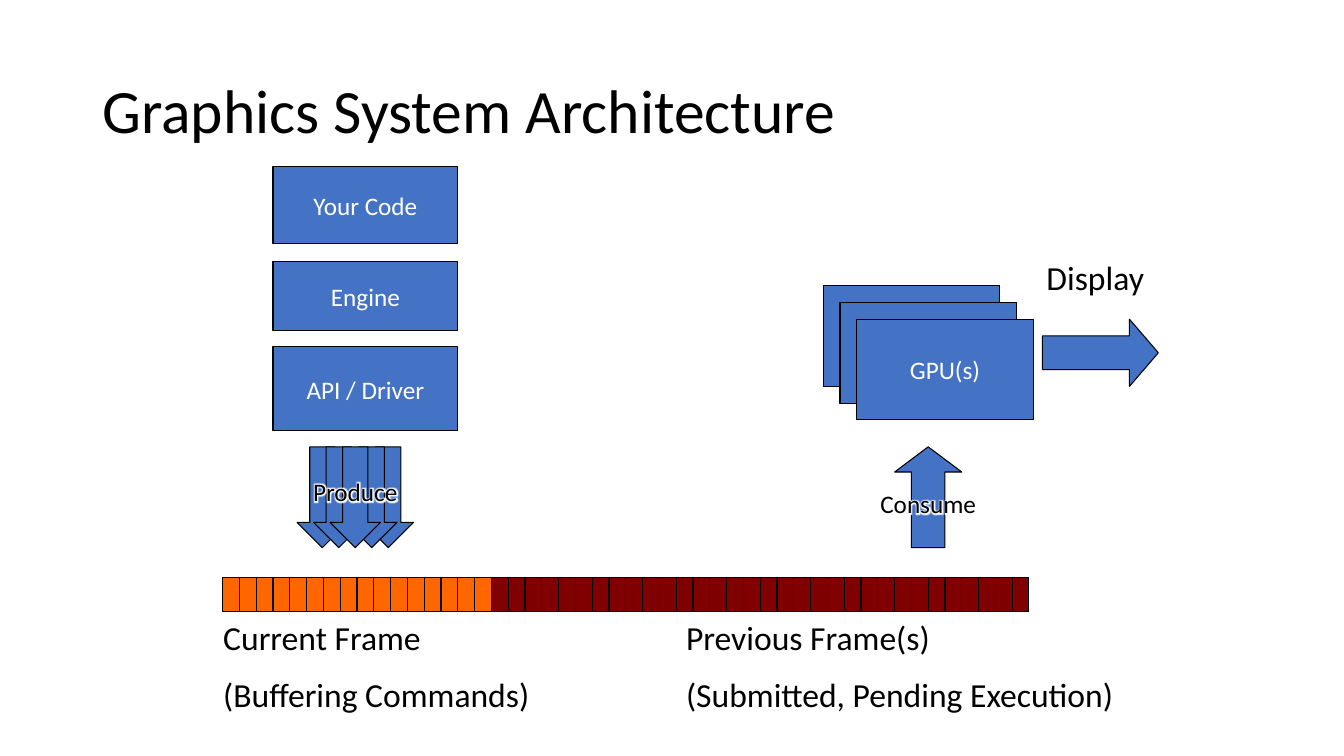
from lxml import etree
from pptx import Presentation
from pptx.dml.color import RGBColor
from pptx.enum.shapes import MSO_SHAPE
from pptx.enum.text import MSO_ANCHOR, PP_ALIGN
from pptx.oxml.ns import qn
from pptx.util import Inches, Pt

RECT, DOWN, UP, RIGHT = (MSO_SHAPE.RECTANGLE, MSO_SHAPE.DOWN_ARROW,
                         MSO_SHAPE.UP_ARROW, MSO_SHAPE.RIGHT_ARROW)
MIDDLE, TOP = MSO_ANCHOR.MIDDLE, MSO_ANCHOR.TOP
CENTER = PP_ALIGN.CENTER

FONT = "Calibri"
COLORS = {"blue": "4472C4", "current": "FF6600", "previous": "800000",
          "black": "000000", "white": "FFFFFF"}

# All lengths are in grid units: the slide is 80 columns by 45 rows.
COLS, ROWS = 80, 45
UNIT = Inches(1 / 6)

TITLE = ("Graphics System Architecture", (5.5, 2.4, 69, 8.7))
STACK_COL, STACK_W = 16.25, 11
STACK = [("Your Code", 9.9, 4.6), ("Engine", 15.55, 4.15), ("API / Driver", 20.65, 5)]
CAPTIONS = [
    (["Current Frame", "(Buffering Commands)"], (12.7, 36.4, 24.5, 6.65)),
    (["Previous Frame(s)", "(Submitted, Pending Execution)"], (40.25, 36.4, 27.6, 6.65)),
    (["Display"], (61.7, 15, 7.7, 3)),
]
GPU_LABELS = ["", "", "GPU(s)"]
GPU_COL, GPU_ROW = 49, 17
ARROW_ROW, ARROW_H = 26.6, 6
PRODUCE_COL, PRODUCE_STEP = 19.65, 0.98
PRODUCE_ORDER = [-2, -1, 2, 1, 0]  # back to front, in steps from the middle arrow
BUFFER_COL, BUFFER_ROW, BUFFER_H = 13.25, 34.4, 2
BUFFER = ["current", "previous", "previous"]
CELLS = 16


def rgb(name):
    return RGBColor.from_string(COLORS[name])


def grid(*box):
    return [int(v * UNIT) for v in box]


def add_run(p, text, size, color):
    r = p.add_run()
    r.text = text
    r.font.size, r.font.name = Pt(size), FONT
    r.font.color.rgb = rgb(color)
    return r


def add_glow(r):
    """Put a soft white halo behind the run."""
    effects = etree.Element(qn("a:effectLst"))
    glow = etree.SubElement(effects, qn("a:glow"), rad=str(Pt(5)))
    etree.SubElement(glow, qn("a:srgbClr"), val=COLORS["white"])
    r.font.fill._xPr.find(qn("a:solidFill")).addnext(effects)


def add_block(shapes, kind, box, fill="blue", label="", color="white", adj=()):
    sp = shapes.add_shape(kind, *grid(*box))
    sp.shadow.inherit = False
    sp.fill.solid()
    sp.fill.fore_color.rgb = rgb(fill)
    sp.line.color.rgb = rgb("black")
    sp.line.width = Pt(0.75)
    for i, value in enumerate(adj):
        sp.adjustments[i] = value
    if label:
        tf = sp.text_frame
        tf.word_wrap = False
        tf.vertical_anchor = MIDDLE
        p = tf.paragraphs[0]
        p.alignment = CENTER
        r = add_run(p, label, 18, color)
        if color == "black":
            add_glow(r)


def add_text(s, lines, box, size, anchor=TOP, spacing=1.0):
    tf = s.shapes.add_textbox(*grid(*box)).text_frame
    tf.word_wrap = True
    tf.vertical_anchor = anchor
    for i, line in enumerate(lines):
        p = tf.add_paragraph() if i else tf.paragraphs[0]
        p.line_spacing = spacing
        p.space_before = Pt(size / 2 if i else 0)
        add_run(p, line, size, "black")


def main():
    prs = Presentation()
    prs.slide_width, prs.slide_height = grid(COLS, ROWS)
    s = prs.slides.add_slide(prs.slide_layouts[6])

    add_text(s, [TITLE[0]], TITLE[1], 44, MIDDLE, 0.9)
    for lines, box in CAPTIONS:
        add_text(s, lines, box, 24)

    for label, row, height in STACK:
        add_block(s.shapes, RECT, (STACK_COL, row, STACK_W, height), label=label)

    for part, color in enumerate(BUFFER):
        group = s.shapes.add_group_shape()
        for i in range(CELLS):
            col = BUFFER_COL + part * CELLS + i
            add_block(group.shapes, RECT, (col, BUFFER_ROW, 1, BUFFER_H), color)

    for step in PRODUCE_ORDER:
        col = PRODUCE_COL + step * PRODUCE_STEP
        add_block(s.shapes, DOWN, (col, ARROW_ROW, 3, ARROW_H), adj=(0.5, 0.5),
                  label="" if step else "Produce", color="black")

    add_block(s.shapes, UP, (53.25, ARROW_ROW, 4, ARROW_H), adj=(0.5, 0.375),
              label="Consume", color="black")
    for i, label in enumerate(GPU_LABELS):
        add_block(s.shapes, RECT, (GPU_COL + i, GPU_ROW + i, 10.5, 6), label=label)
    add_block(s.shapes, RIGHT, (62.05, 19, 6.9, 4), adj=(0.5, 0.43))

    prs.save("out.pptx")


if __name__ == "__main__":
    main()
